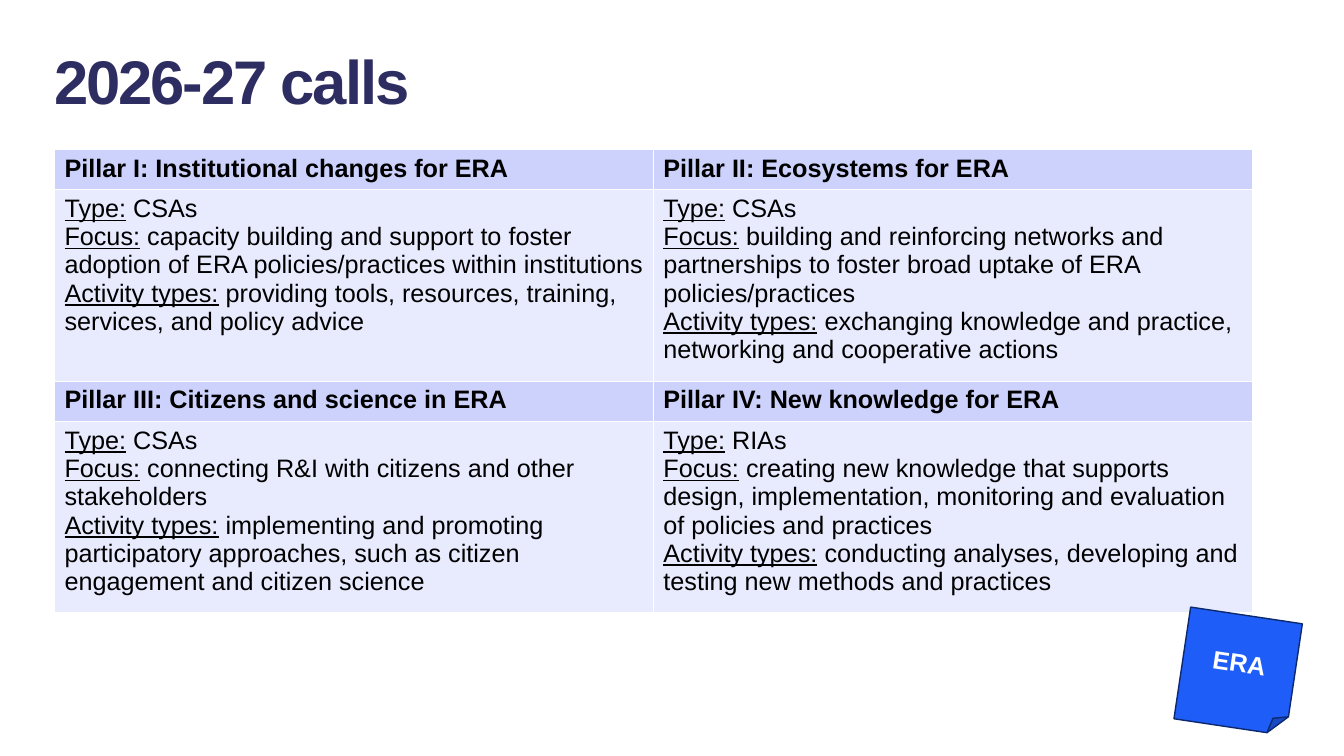
from lxml.etree import SubElement
from pptx import Presentation
from pptx.dml.color import RGBColor
from pptx.enum.shapes import MSO_SHAPE
from pptx.enum.text import MSO_ANCHOR, MSO_AUTO_SIZE, PP_ALIGN
from pptx.oxml.ns import qn
from pptx.util import Inches, Pt

LABELS = ("Type:", "Focus:", "Activity types:")
PILLARS = [
    ("Pillar I: Institutional changes for ERA", (
        "CSAs",
        "capacity building and support to foster adoption of ERA "
        "policies/practices within institutions",
        "providing tools, resources, training, services, and policy advice")),
    ("Pillar II: Ecosystems for ERA", (
        "CSAs",
        "building and reinforcing networks and partnerships to foster "
        "broad uptake of ERA policies/practices",
        "exchanging knowledge and practice, networking and "
        "cooperative actions")),
    ("Pillar III: Citizens and science in ERA", (
        "CSAs",
        "connecting R&I with citizens and other stakeholders",
        "implementing and promoting participatory approaches, such as "
        "citizen engagement and citizen science")),
    ("Pillar IV: New knowledge for ERA", (
        "RIAs",
        "creating new knowledge that supports design, implementation, "
        "monitoring and evaluation of policies and practices",
        "conducting analyses, developing and testing new methods "
        "and practices")),
]


def paint(fill, color):
    fill.solid()
    fill.fore_color.rgb = RGBColor.from_string(color)


def add_run(para, text, size=18, color="000000", bold=False, under=False):
    run = para.add_run()
    run.text = text
    font = run.font
    font.name = "Arial"
    font.size = Pt(size)
    font.bold = bold
    font.underline = under
    font.color.rgb = RGBColor.from_string(color)
    return run


def add_title(slide, text):
    box = slide.shapes.add_textbox(
        Inches(0.44), Inches(0.38), Inches(8.25), Inches(0.84))
    frame = box.text_frame
    frame.word_wrap = True
    frame.auto_size = MSO_AUTO_SIZE.SHAPE_TO_FIT_TEXT
    run = add_run(frame.paragraphs[0], text, 44, "2E2D62", True)
    run.font._element.set("spc", "-150")


def style_cell(cell, color):
    props = cell._tc.get_or_add_tcPr()
    for side in ("lnL", "lnR", "lnT", "lnB"):
        line = SubElement(props, qn("a:" + side), w=str(Pt(1)))
        fill = SubElement(line, qn("a:solidFill"))
        SubElement(fill, qn("a:srgbClr"), val="FFFFFF")
    paint(cell.fill, color)


def fill_head(cell, text):
    style_cell(cell, "CDD2FC")
    add_run(cell.text_frame.paragraphs[0], text, bold=True)


def fill_body(cell, facts):
    style_cell(cell, "E8EAFE")
    frame = cell.text_frame
    for i, (label, fact) in enumerate(zip(LABELS, facts)):
        para = frame.add_paragraph() if i else frame.paragraphs[0]
        add_run(para, label, under=True)
        add_run(para, " " + fact)


def add_grid(slide, pillars):
    table = slide.shapes.add_table(
        4, 2, Inches(0.54), Inches(1.48), Inches(11.88), Inches(4.62)).table
    for i, row in enumerate(table.rows):
        row.height = Inches(1.9 if i % 2 else 0.4)
    for i, (head, facts) in enumerate(pillars):
        row, col = i // 2 * 2, i % 2
        fill_head(table.cell(row, col), head)
        fill_body(table.cell(row + 1, col), facts)


def add_note(slide, text):
    note = slide.shapes.add_shape(
        MSO_SHAPE.FOLDED_CORNER,
        Inches(11.72), Inches(6.1), Inches(1.12), Inches(1.12))
    note.rotation = 8.5
    note.shadow.inherit = False
    paint(note.fill, "1E5DF8")
    paint(note.line.fill, "0D296D")
    note.line.width = Pt(1)
    frame = note.text_frame
    frame.vertical_anchor = MSO_ANCHOR.MIDDLE
    para = frame.paragraphs[0]
    para.alignment = PP_ALIGN.CENTER
    add_run(para, text, color="FFFFFF", bold=True)


def main():
    deck = Presentation()
    deck.slide_width = Inches(13.33)
    deck.slide_height = Inches(7.5)
    slide = deck.slides.add_slide(deck.slide_layouts[6])
    add_title(slide, "2026-27 calls")
    add_grid(slide, PILLARS)
    add_note(slide, "ERA")
    deck.save("out.pptx")


if __name__ == "__main__":
    main()
